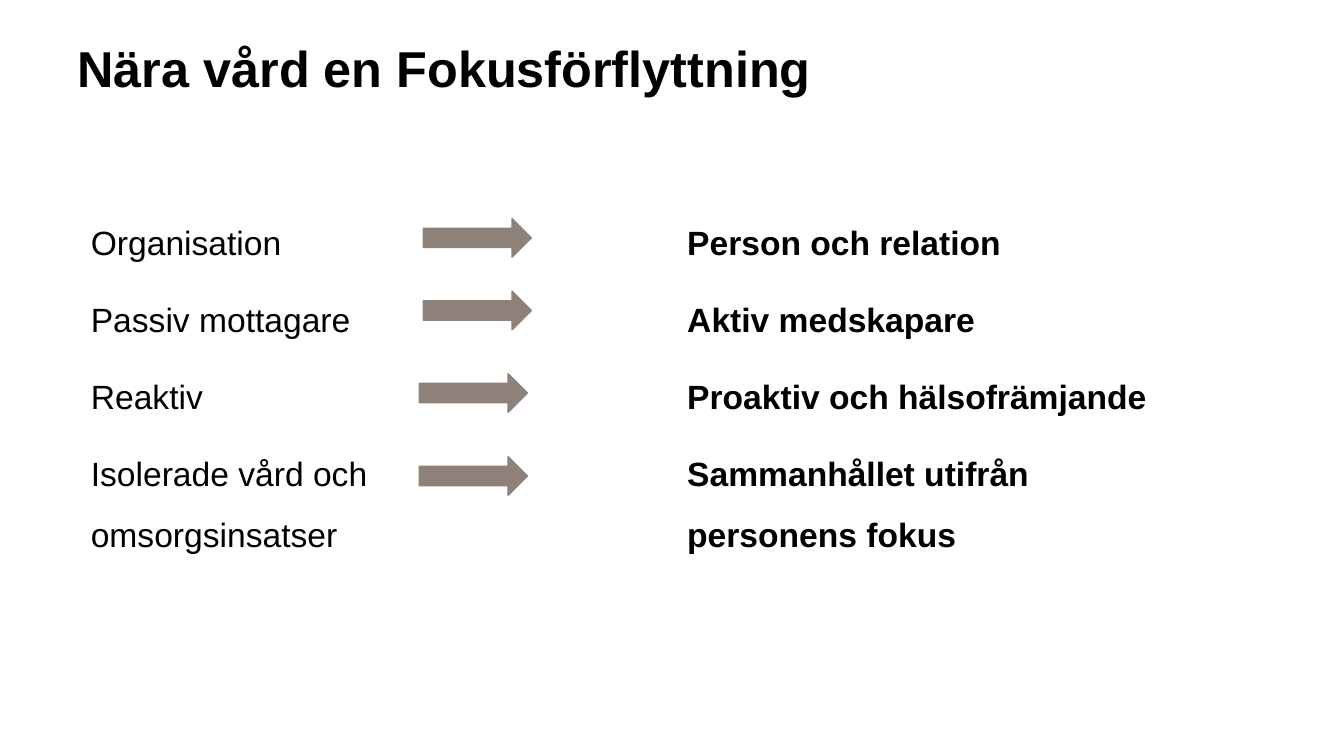
from dataclasses import dataclass

from pptx import Presentation
from pptx.dml.color import RGBColor
from pptx.enum.shapes import MSO_SHAPE
from pptx.enum.text import MSO_ANCHOR, MSO_AUTO_SIZE, PP_ALIGN
from pptx.util import Cm, Pt

RIGHT_ARROW = MSO_SHAPE.RIGHT_ARROW
TOP = MSO_ANCHOR.TOP
NO_AUTOFIT = MSO_AUTO_SIZE.NONE
LEFT = PP_ALIGN.LEFT
TITLE_ONLY = 5


@dataclass(frozen=True)
class Theme:
    font: str = "Arial"
    text: RGBColor = RGBColor(0x00, 0x00, 0x00)
    arrow: RGBColor = RGBColor(0x8D, 0x81, 0x79)
    title_size: int = 36
    body_size: int = 24


class SlideBuilder:
    def __init__(self, slide, theme):
        self.slide = slide
        self.theme = theme

    def prepare_frame(self, frame):
        frame.word_wrap = True
        frame.auto_size = NO_AUTOFIT
        frame.vertical_anchor = TOP

    def add_run(self, paragraph, text, size, bold):
        paragraph.alignment = LEFT
        run = paragraph.add_run()
        run.text = text
        run.font.name = self.theme.font
        run.font.size = Pt(size)
        run.font.bold = bold
        run.font.color.rgb = self.theme.text

    def title(self, text, left, top, width, height):
        shape = self.slide.shapes.title
        shape.left, shape.top = Cm(left), Cm(top)
        shape.width, shape.height = Cm(width), Cm(height)
        self.prepare_frame(shape.text_frame)
        paragraph = shape.text_frame.paragraphs[0]
        paragraph.line_spacing = 0.95
        self.add_run(paragraph, text, self.theme.title_size, True)

    def column(self, lines, left, top, width, height, bold=False):
        shape = self.slide.shapes.add_textbox(Cm(left), Cm(top), Cm(width), Cm(height))
        frame = shape.text_frame
        self.prepare_frame(frame)
        for index, line in enumerate(lines):
            paragraph = frame.add_paragraph() if index else frame.paragraphs[0]
            paragraph._p.get_or_add_pPr().set("marL", str(Cm(0.08)))
            paragraph.line_spacing = 1.5
            paragraph.space_after = Pt(12)
            self.add_run(paragraph, line, self.theme.body_size, bold)

    def arrow(self, left, top, width, height):
        shape = self.slide.shapes.add_shape(
            RIGHT_ARROW, Cm(left), Cm(top), Cm(width), Cm(height))
        shape.shadow.inherit = False
        shape.fill.solid()
        shape.fill.fore_color.rgb = self.theme.arrow
        shape.line.color.rgb = self.theme.arrow
        shape.line.width = Pt(1)


SHIFTS = [
    ("Organisation", "Person och relation"),
    ("Passiv mottagare", "Aktiv medskapare"),
    ("Reaktiv", "Proaktiv och hälsofrämjande"),
    ("Isolerade vård och omsorgsinsatser", "Sammanhållet utifrån personens fokus"),
]
ARROW_POSITIONS = [(10.67, 5.51), (10.67, 7.34), (10.57, 9.42), (10.57, 11.51)]


def main():
    presentation = Presentation()
    presentation.slide_width = Cm(33.87)
    presentation.slide_height = Cm(19.05)
    slide = presentation.slides.add_slide(presentation.slide_layouts[TITLE_ONLY])
    builder = SlideBuilder(slide, Theme())

    builder.title("Nära vård en Fokusförflyttning", 1.7, 0.91, 26.7, 3.18)
    from_lines, to_lines = zip(*SHIFTS)
    builder.column(from_lines, 1.96, 4.95, 13.11, 10.39)
    builder.column(to_lines, 16.99, 4.95, 13.36, 10.39, bold=True)
    for left, top in ARROW_POSITIONS:
        builder.arrow(left, top, 2.72, 0.97)

    presentation.save("out.pptx")


if __name__ == "__main__":
    main()
